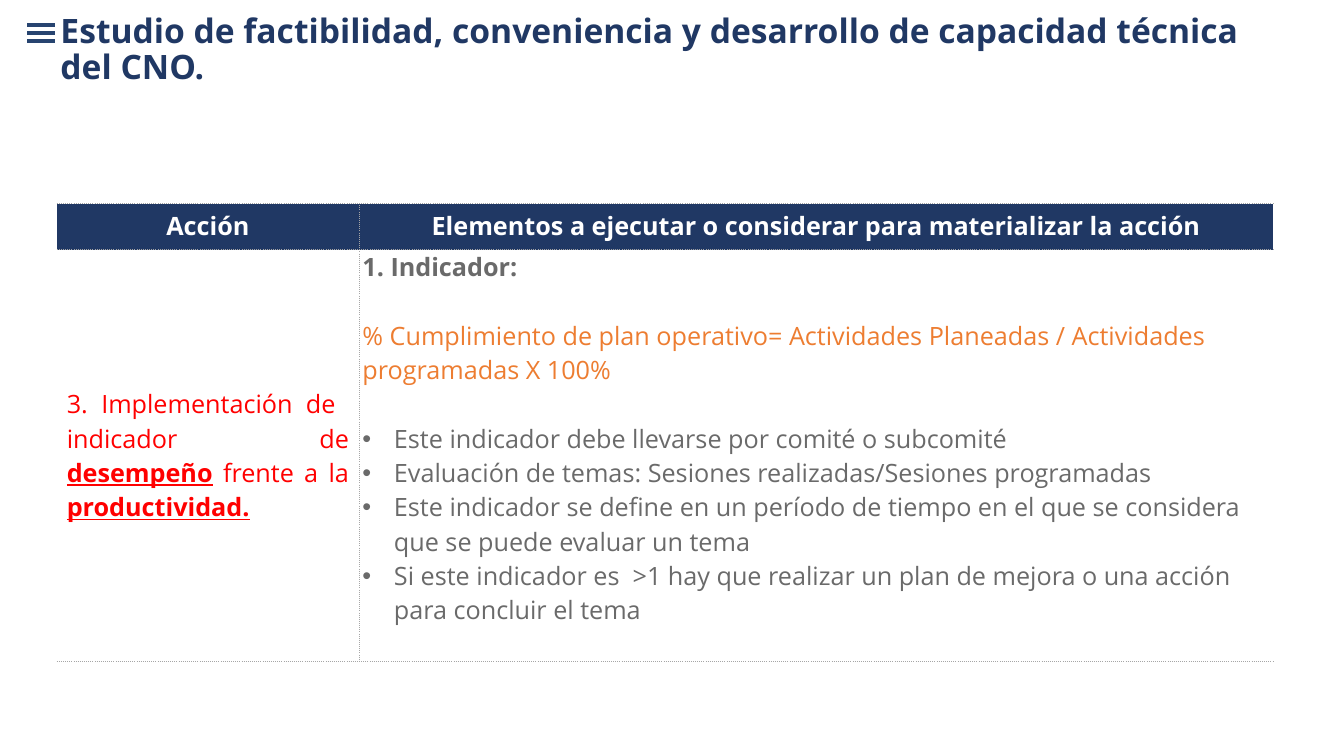
"""Build the slide on the performance indicator of the CNO feasibility study."""
from dataclasses import dataclass

from lxml.etree import SubElement
from pptx import Presentation
from pptx.dml.color import RGBColor
from pptx.enum.shapes import MSO_CONNECTOR as Connector
from pptx.enum.text import MSO_ANCHOR as Anchor, MSO_AUTO_SIZE as AutoSize, PP_ALIGN as Align
from pptx.oxml.ns import qn
from pptx.util import Pt

NAVY = RGBColor(0x20, 0x38, 0x64)
MENU_BLUE = RGBColor(0x27, 0x44, 0x70)
WHITE = RGBColor(0xFF, 0xFF, 0xFF)
RED = RGBColor(0xFF, 0x00, 0x00)
GRAY = RGBColor(0x6A, 0x6A, 0x6A)
ORANGE = RGBColor(0xED, 0x7D, 0x31)
BORDER_GRAY = RGBColor(0xA6, 0xA6, 0xA6)
FONT = "Open Sans"
BODY_SIZE = 18
BODY_LINE = 24.5
BULLET_INDENT = 22.5


@dataclass(frozen=True)
class Span:
    text: str
    color: RGBColor
    bold: bool = False
    underline: bool = False
    size: float = BODY_SIZE


@dataclass(frozen=True)
class Para:
    spans: tuple[Span, ...]
    align: Align = Align.LEFT
    before: float = 0
    bullet: bool = False


@dataclass(frozen=True)
class CellContent:
    paras: tuple[Para, ...]
    fill: RGBColor | None = None
    anchor: Anchor = Anchor.TOP
    margins: tuple[float, float, float, float] = (7.2, 3.6, 7.2, 3.6)


def heading(text: str) -> CellContent:
    """Return a navy header cell."""
    return CellContent((Para((Span(text, WHITE, bold=True),), Align.CENTER),), NAVY)


def bullet(text: str, before: float = 0) -> Para:
    """Return a gray bulleted paragraph."""
    return Para((Span(text, GRAY),), before=before, bullet=True)


TITLE = Para((Span(
    "Estudio de factibilidad, conveniencia y desarrollo de capacidad técnica del CNO.",
    NAVY, bold=True, size=24),))

ACTION = CellContent((Para((
    Span("3. Implementación de  indicador de ", RED),
    Span("desempeño", RED, bold=True, underline=True),
    Span(" frente a la ", RED),
    Span("productividad.", RED, bold=True, underline=True),
), Align.JUSTIFY),), anchor=Anchor.MIDDLE)

ELEMENTS = CellContent((
    Para((Span("1. Indicador:", GRAY, bold=True),)),
    Para((Span("% Cumplimiento de plan operativo= Actividades Planeadas / "
               "Actividades programadas X 100%", ORANGE),), before=BODY_LINE),
    bullet("Este indicador debe llevarse por comité o subcomité", before=BODY_LINE),
    bullet("Evaluación de temas: Sesiones realizadas/Sesiones programadas"),
    bullet("Este indicador se define en un período de tiempo en el que se considera "
           "que se puede evaluar un tema"),
    bullet("Si este indicador es  >1 hay que realizar un plan de mejora o una acción "
           "para concluir el tema"),
), margins=(2.4, 0, 2.4, 0))

ROWS = (
    (heading("Acción"), heading("Elementos a ejecutar o considerar para materializar la acción")),
    (ACTION, ELEMENTS),
)
COLUMN_WIDTHS = (216, 653)
ROW_HEIGHTS = (33, 294)


def write(frame, paras: tuple[Para, ...]) -> None:
    """Fill a text frame with formatted paragraphs."""
    for index, para in enumerate(paras):
        paragraph = frame.paragraphs[0] if index == 0 else frame.add_paragraph()
        paragraph.alignment = para.align
        paragraph.space_before = Pt(para.before)
        if para.bullet:
            properties = paragraph._p.get_or_add_pPr()
            properties.set("marL", str(Pt(BULLET_INDENT)))
            properties.set("indent", str(-Pt(BULLET_INDENT)))
            SubElement(properties, qn("a:buFont"), typeface="Arial")
            SubElement(properties, qn("a:buChar"), char="•")
        for span in para.spans:
            run = paragraph.add_run()
            run.text = span.text
            run.font.name = FONT
            run.font.size = Pt(span.size)
            run.font.bold = span.bold
            run.font.underline = span.underline
            run.font.color.rgb = span.color


def add_border(cell, side: str, visible: bool) -> None:
    """Give one side of a cell a dotted border or none."""
    line = SubElement(cell._tc.get_or_add_tcPr(), qn(f"a:ln{side}"), w=str(Pt(1)))
    if visible:
        fill = SubElement(line, qn("a:solidFill"))
        SubElement(fill, qn("a:srgbClr"), val=str(BORDER_GRAY))
        SubElement(line, qn("a:prstDash"), val="sysDot")
    else:
        SubElement(line, qn("a:noFill"))


def draw_cell(cell, content: CellContent, column: int) -> None:
    """Format and fill one table cell."""
    inner_side = {"L": column > 0, "R": column < len(COLUMN_WIDTHS) - 1}
    for side in "LRTB":
        add_border(cell, side, inner_side.get(side, True))
    if content.fill is None:
        cell.fill.background()
    else:
        cell.fill.solid()
        cell.fill.fore_color.rgb = content.fill
    cell.vertical_anchor = content.anchor
    (cell.margin_left, cell.margin_top,
     cell.margin_right, cell.margin_bottom) = map(Pt, content.margins)
    write(cell.text_frame, content.paras)


def draw_table(slide) -> None:
    """Add the table of actions and elements."""
    table = slide.shapes.add_table(
        len(ROWS), len(COLUMN_WIDTHS), Pt(40.5), Pt(145.5),
        Pt(sum(COLUMN_WIDTHS)), Pt(sum(ROW_HEIGHTS))).table
    table.first_row = False
    table.horz_banding = False
    for column, width in zip(table.columns, COLUMN_WIDTHS):
        column.width = Pt(width)
    for row, (height, contents) in enumerate(zip(ROW_HEIGHTS, ROWS)):
        table.rows[row].height = Pt(height)
        for column, content in enumerate(contents):
            draw_cell(table.cell(row, column), content, column)


def draw_menu_mark(slide) -> None:
    """Add the three bars beside the title."""
    for index in range(3):
        y = Pt(18 + 5.75 * index)
        bar = slide.shapes.add_connector(Connector.STRAIGHT, Pt(19.5), y, Pt(39.5), y)
        bar.line.color.rgb = MENU_BLUE
        bar.line.width = Pt(3)
        SubElement(bar._element.spPr, qn("a:effectLst"))


def draw_title(slide) -> None:
    """Place and format the title."""
    title = slide.shapes.title
    title.left, title.top, title.width, title.height = map(Pt, (36, 4.3, 879, 64))
    frame = title.text_frame
    frame.word_wrap = True
    frame.auto_size = AutoSize.NONE
    frame.vertical_anchor = Anchor.MIDDLE
    write(frame, (TITLE,))
    frame.paragraphs[0].line_spacing = 0.9


def main() -> None:
    """Build and save the presentation."""
    presentation = Presentation()
    presentation.slide_width, presentation.slide_height = Pt(960), Pt(540)
    slide = presentation.slides.add_slide(presentation.slide_layouts[5])
    draw_menu_mark(slide)
    draw_title(slide)
    draw_table(slide)
    presentation.save("out.pptx")


if __name__ == "__main__":
    main()
